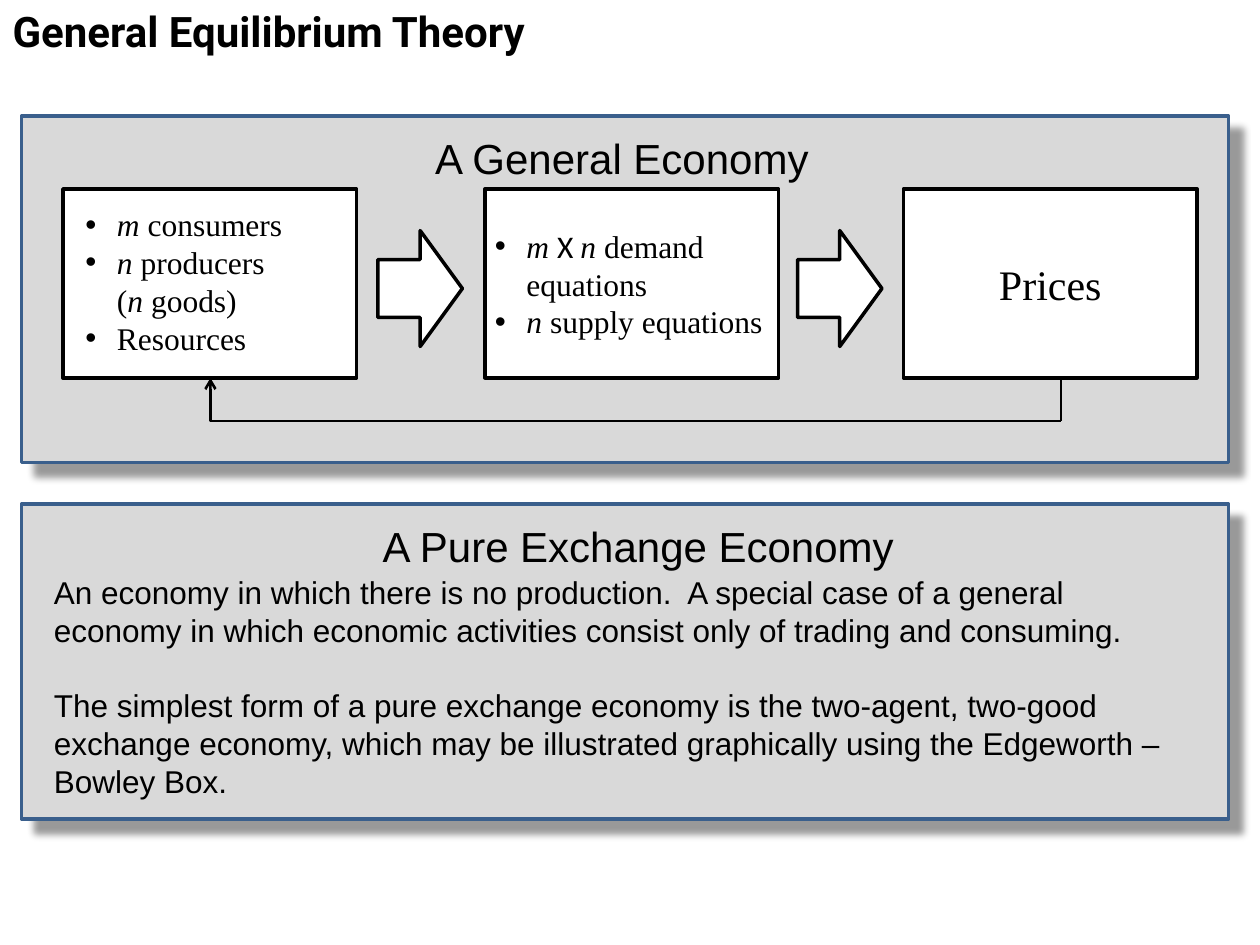
from lxml import etree
from pptx import Presentation
from pptx.dml.color import RGBColor
from pptx.enum.shapes import MSO_CONNECTOR, MSO_SHAPE
from pptx.enum.text import MSO_ANCHOR, PP_ALIGN
from pptx.oxml import parse_xml
from pptx.oxml.ns import nsdecls, qn
from pptx.util import Inches, Pt

RECTANGLE, RIGHT_ARROW = MSO_SHAPE.RECTANGLE, MSO_SHAPE.RIGHT_ARROW
STRAIGHT, ELBOW = MSO_CONNECTOR.STRAIGHT, MSO_CONNECTOR.ELBOW
LEFT, CENTER, TOP = PP_ALIGN.LEFT, PP_ALIGN.CENTER, MSO_ANCHOR.TOP

COLORS = {"panel": "D9D9D9", "border": "3A5F8C", "ink": "000000", "white": "FFFFFF"}
SERIF, SANS, SYMBOL, TITLE_FONT = "Times New Roman", "Arial", "Calibri", "Roboto"
MATH = {"italic": True}


def color(name):
    """Return the named colour."""
    return RGBColor.from_string(COLORS[name])


def inches(*lengths):
    """Convert several lengths to inches."""
    return [Inches(length) for length in lengths]


def add_block(slide, kind, box, fill="white", line="ink"):
    """Add a filled and outlined preset shape."""
    block = slide.shapes.add_shape(kind, *inches(*box))
    block.shadow.inherit = False
    block.fill.solid()
    block.fill.fore_color.rgb = color(fill)
    block.line.color.rgb = color(line)
    block.line.width = Pt(2)
    return block


def add_panel(slide, box):
    """Add a grey panel that casts a shadow to the lower right."""
    panel = add_block(slide, RECTANGLE, box, "panel", "border")
    effects = panel._element.spPr.find(qn("a:effectLst"))
    effects.append(parse_xml(
        f'<a:outerShdw {nsdecls("a")} blurRad="{Pt(4)}" dist="{Pt(11)}" dir="2700000" '
        f'algn="tl" rotWithShape="0"><a:srgbClr val="{COLORS["ink"]}">'
        '<a:alpha val="40000"/></a:srgbClr></a:outerShdw>'))


def write(frame, paragraphs, size, font, align=LEFT, bullet=False, gap=0, wrap=True, bold=False):
    """Fill a text frame with paragraphs made of (text, overrides) runs."""
    frame.word_wrap = wrap
    frame.vertical_anchor = TOP
    for index, runs in enumerate(paragraphs):
        paragraph = frame.add_paragraph() if index else frame.paragraphs[0]
        paragraph.alignment = align
        if index and gap:
            paragraph.space_before = Pt(gap)
        if bullet:
            properties = paragraph._p.get_or_add_pPr()
            properties.set("marL", str(Inches(0.25)))
            properties.set("indent", str(-Inches(0.25)))
            etree.SubElement(properties, qn("a:buFont")).set("typeface", SANS)
            etree.SubElement(properties, qn("a:buChar")).set("char", "•")
        for text, overrides in runs:
            if text == "\n":
                paragraph.add_line_break()
                continue
            run = paragraph.add_run()
            run.text = text
            run.font.color.rgb = color("ink")
            look = {"size": Pt(size), "name": font, "bold": bold, "italic": False, **overrides}
            for attribute, value in look.items():
                setattr(run.font, attribute, value)


def add_text(slide, box, paragraphs, size, font, **options):
    """Add a text box at the given place."""
    label = slide.shapes.add_textbox(*inches(*box))
    write(label.text_frame, paragraphs, size, font, **options)


def add_line(slide, kind, ends):
    """Add a thin black connector without shadow."""
    line = slide.shapes.add_connector(kind, *inches(*ends))
    line.line.color.rgb = color("ink")
    line.line.width = Pt(1.5)
    etree.SubElement(line._element.spPr, qn("a:effectLst"))
    return line


def add_feedback(slide, start, end, top, drop):
    """Lead a line from the last stage back to the first, arriving with an arrow."""
    add_line(slide, STRAIGHT, (start, top, start, top + drop))
    loop = add_line(slide, ELBOW, (end, top, start, top + drop))
    properties = loop._element.spPr
    properties.find(qn("a:xfrm")).set("rot", "10800000")
    guides = properties.find(qn("a:prstGeom")).get_or_add_avLst()
    guide = etree.SubElement(guides, qn("a:gd"))
    guide.set("name", "adj1")
    guide.set("fmla", "val 100000")
    etree.SubElement(properties.find(qn("a:ln")), qn("a:tailEnd")).set("type", "arrow")


def add_title(slide, box):
    """Place and format the slide title."""
    title = slide.shapes.title
    title.left, title.top, title.width, title.height = inches(*box)
    frame = title.text_frame
    for side, margin in {"left": 0.1, "right": 0.1, "top": 0.05, "bottom": 0.05}.items():
        setattr(frame, f"margin_{side}", Inches(margin))
    write(frame, [[("General Equilibrium Theory", {})]], 24, TITLE_FONT, wrap=False, bold=True)


def add_general_economy(slide, box):
    """Draw the flow from agents to equations to prices and back."""
    left, top, _, _ = box
    add_panel(slide, box)
    stage_top, stage_width, stage_height = top + 0.58, 2.33, 1.5
    stages = [left + offset for offset in (0.33, 3.68, 7)]
    for stage in stages:
        add_block(slide, RECTANGLE, (stage, stage_top, stage_width, stage_height))
    for offset in (2.83, 6.16):
        add_block(slide, RIGHT_ARROW, (left + offset, stage_top + 0.33, 0.67, 0.92))

    add_text(slide, (left + 3.12, top + 0.08, 3.29, 0.51),
             [[("A General Economy", {})]], 24, SANS, align=CENTER, wrap=False)
    agents = [
        [("m", MATH), (" consumers", {})],
        [("n", MATH), (" producers", {}), ("\n", {}), ("(", {}), ("n", MATH), (" goods)", {})],
        [("Resources", {})],
    ]
    equations = [
        [("m ", MATH), ("X ", {"name": SYMBOL}), ("n", MATH), (" demand equations", {})],
        [("n", MATH), (" supply equations", {})],
    ]
    add_text(slide, (stages[0] + 0.08, stage_top + 0.08, 1.92, 1.31),
             agents, 18, SERIF, bullet=True)
    add_text(slide, (stages[1] - 0.02, stage_top + 0.25, stage_width, 1.01),
             equations, 18, SERIF, bullet=True)
    add_text(slide, (stages[2] + 0.66, stage_top + 0.5, 1.15, 0.51),
             [[("Prices", {})]], 24, SERIF)
    add_feedback(slide, left + 8.25, left + 1.5, stage_top + stage_height, 0.34)


def add_pure_exchange(slide, box):
    """Draw the panel that explains a pure exchange economy."""
    left, top, _, _ = box
    add_panel(slide, box)
    add_text(slide, (left + 2.7, top + 0.08, 4.39, 0.51),
             [[("A Pure Exchange Economy", {})]], 24, SANS, align=CENTER, wrap=False)
    explanation = [
        [("An economy in which there is no production.  A special case of a general economy "
          "in which economic activities consist only of trading and consuming.", {})],
        [("The simplest form of a pure exchange economy is the two-agent, two-good exchange "
          "economy, which may be illustrated graphically using the Edgeworth – Bowley Box.", {})],
    ]
    add_text(slide, (left + 0.16, top + 0.5, 9.25, 1.92), explanation, 18, SANS, gap=21.5)


def main():
    """Build and save the slide."""
    presentation = Presentation()
    presentation.slide_width, presentation.slide_height = inches(10, 7.5)
    slide = presentation.slides.add_slide(presentation.slide_layouts[5])
    add_title(slide, (0, -0.01, 4.49, 0.51))
    add_general_economy(slide, (0.17, 0.92, 9.58, 2.75))
    add_pure_exchange(slide, (0.17, 4, 9.58, 2.5))
    presentation.save("out.pptx")


if __name__ == "__main__":
    main()
